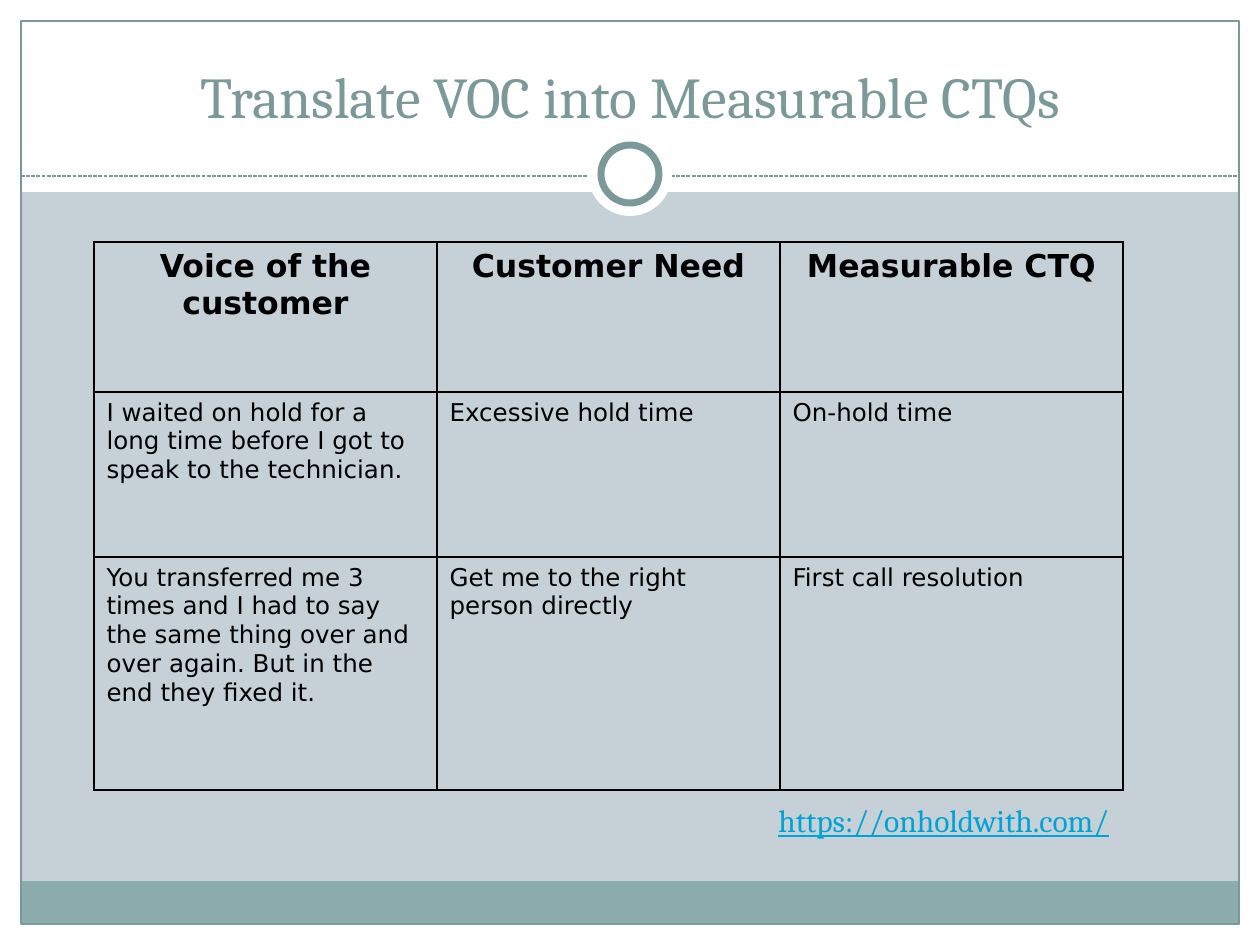
"""Build the slide that translates customer voice into measurable CTQs."""
from dataclasses import dataclass
from typing import Any, Optional

import lxml.etree
import pptx
import pptx.dml.color
import pptx.enum.dml
import pptx.enum.shapes
import pptx.enum.text
import pptx.oxml
import pptx.oxml.ns
import pptx.util

SHAPE = pptx.enum.shapes.MSO_SHAPE
ALIGN = pptx.enum.text.PP_ALIGN
ANCHOR = pptx.enum.text.MSO_ANCHOR
COLORS = {
    "background": "C5D1D7",
    "white": "FFFFFF",
    "band": "8CADAE",
    "accent": "7C999A",
    "text": "000000",
    "link": "00A3D6",
}
WIDTH, HEIGHT, MARGIN = 1260, 945, 21
RULE_Y = 176
COL_WIDTH = 343
ROW_HEIGHTS = [150, 165, 233]
ROWS = [
    ["Voice of the customer", "Customer Need", "Measurable CTQ"],
    ["I waited on hold for a long time before I got to speak to the technician.",
     "Excessive hold time", "On-hold time"],
    ["You transferred me 3 times and I had to say the same thing over and over again. "
     "But in the end they fixed it.",
     "Get me to the right person directly", "First call resolution"],
]


@dataclass
class Block:
    x: int
    y: int
    w: int
    h: int
    fill: Optional[str] = "white"
    line: Optional[str] = None
    weight: float = 0.75
    kind: Any = SHAPE.RECTANGLE


@dataclass
class Label:
    x: int
    y: int
    w: int
    h: int
    text: str
    size: int
    color: str
    align: Any = ALIGN.LEFT
    anchor: Any = ANCHOR.TOP
    underline: bool = False
    wrap: bool = True


INNER_W, INNER_H = WIDTH - 2 * MARGIN, HEIGHT - 2 * MARGIN
BLOCKS = [
    Block(0, HEIGHT - MARGIN, WIDTH, MARGIN),
    Block(0, 0, WIDTH, 192),
    Block(0, 0, MARGIN, HEIGHT),
    Block(WIDTH - MARGIN, 0, MARGIN, HEIGHT),
    Block(MARGIN, 881, INNER_W, 43, "band"),
    Block(MARGIN, MARGIN, INNER_W, INNER_H, None, "accent"),
]
RINGS = [
    Block(588, 132, 84, 84, kind=SHAPE.OVAL),
    Block(601, 145, 58, 58, "white", "accent", 4, SHAPE.OVAL),
]
LABELS = [
    Label(42, 32, 1176, 104, "Translate VOC into Measurable CTQs", 33, "accent",
          ALIGN.CENTER, ANCHOR.BOTTOM),
    Label(766, 795, 383, 50, "https://onholdwith.com/", 18, "link",
          underline=True, wrap=False),
]


def px(n: int) -> pptx.util.Emu:
    return pptx.util.Emu(round(n * 914400 / 126))


def rgb(name: str) -> pptx.dml.color.RGBColor:
    return pptx.dml.color.RGBColor.from_string(COLORS[name])


def style(p: Any, size: int, font: str, color: str, bold: bool = False,
          underline: bool = False) -> None:
    for r in p.runs:
        r.font.size = pptx.util.Pt(size)
        r.font.name = font
        r.font.bold = bold
        r.font.underline = underline
        r.font.color.rgb = rgb(color)


def draw_block(s: Any, b: Block) -> None:
    sp = s.shapes.add_shape(b.kind, px(b.x), px(b.y), px(b.w), px(b.h))
    sp.shadow.inherit = False
    if b.fill:
        sp.fill.solid()
        sp.fill.fore_color.rgb = rgb(b.fill)
    else:
        sp.fill.background()
    if b.line:
        sp.line.color.rgb = rgb(b.line)
        sp.line.width = pptx.util.Pt(b.weight)
    else:
        sp.line.fill.background()


def draw_rule(s: Any) -> None:
    sp = s.shapes.add_connector(pptx.enum.shapes.MSO_CONNECTOR.STRAIGHT,
                                px(MARGIN), px(RULE_Y), px(WIDTH - MARGIN), px(RULE_Y))
    sp.line.color.rgb = rgb("accent")
    sp.line.width = pptx.util.Pt(0.75)
    sp.line.dash_style = pptx.enum.dml.MSO_LINE.SQUARE_DOT
    lxml.etree.SubElement(sp._element.spPr, pptx.oxml.ns.qn("a:effectLst"))


def draw_label(s: Any, b: Label) -> None:
    sp = s.shapes.add_textbox(px(b.x), px(b.y), px(b.w), px(b.h))
    tf = sp.text_frame
    tf.word_wrap = b.wrap
    tf.vertical_anchor = b.anchor
    tf.text = b.text
    p = tf.paragraphs[0]
    p.alignment = b.align
    style(p, b.size, "Cambria", b.color, underline=b.underline)


def add_borders(cell: Any) -> None:
    tc_pr = cell._tc.get_or_add_tcPr()
    for i, side in enumerate(("lnL", "lnR", "lnT", "lnB")):
        tc_pr.insert(i, pptx.oxml.parse_xml(
            f'<a:{side} {pptx.oxml.ns.nsdecls("a")} w="12700"><a:solidFill>'
            f'<a:srgbClr val="{COLORS["text"]}"/></a:solidFill></a:{side}>'))


def draw_table(s: Any) -> None:
    cols = len(ROWS[0])
    table = s.shapes.add_table(len(ROWS), cols, px(94), px(242),
                               px(cols * COL_WIDTH), px(sum(ROW_HEIGHTS))).table
    table.first_row = table.horz_banding = False
    for col in table.columns:
        col.width = px(COL_WIDTH)
    for i, (texts, height) in enumerate(zip(ROWS, ROW_HEIGHTS)):
        table.rows[i].height = px(height)
        header = i == 0
        for j, text in enumerate(texts):
            cell = table.cell(i, j)
            cell.fill.background()
            add_borders(cell)
            cell.text_frame.text = text
            p = cell.text_frame.paragraphs[0]
            p.alignment = ALIGN.CENTER if header else ALIGN.LEFT
            style(p, 18 if header else 14, "DejaVu Sans", "text", bold=header)


def main() -> None:
    prs = pptx.Presentation()
    prs.slide_width, prs.slide_height = px(WIDTH), px(HEIGHT)
    s = prs.slides.add_slide(prs.slide_layouts[6])
    s.background.fill.solid()
    s.background.fill.fore_color.rgb = rgb("background")
    for b in BLOCKS:
        draw_block(s, b)
    draw_rule(s)
    for b in RINGS:
        draw_block(s, b)
    draw_table(s)
    for label in LABELS:
        draw_label(s, label)
    prs.save("out.pptx")


if __name__ == "__main__":
    main()
